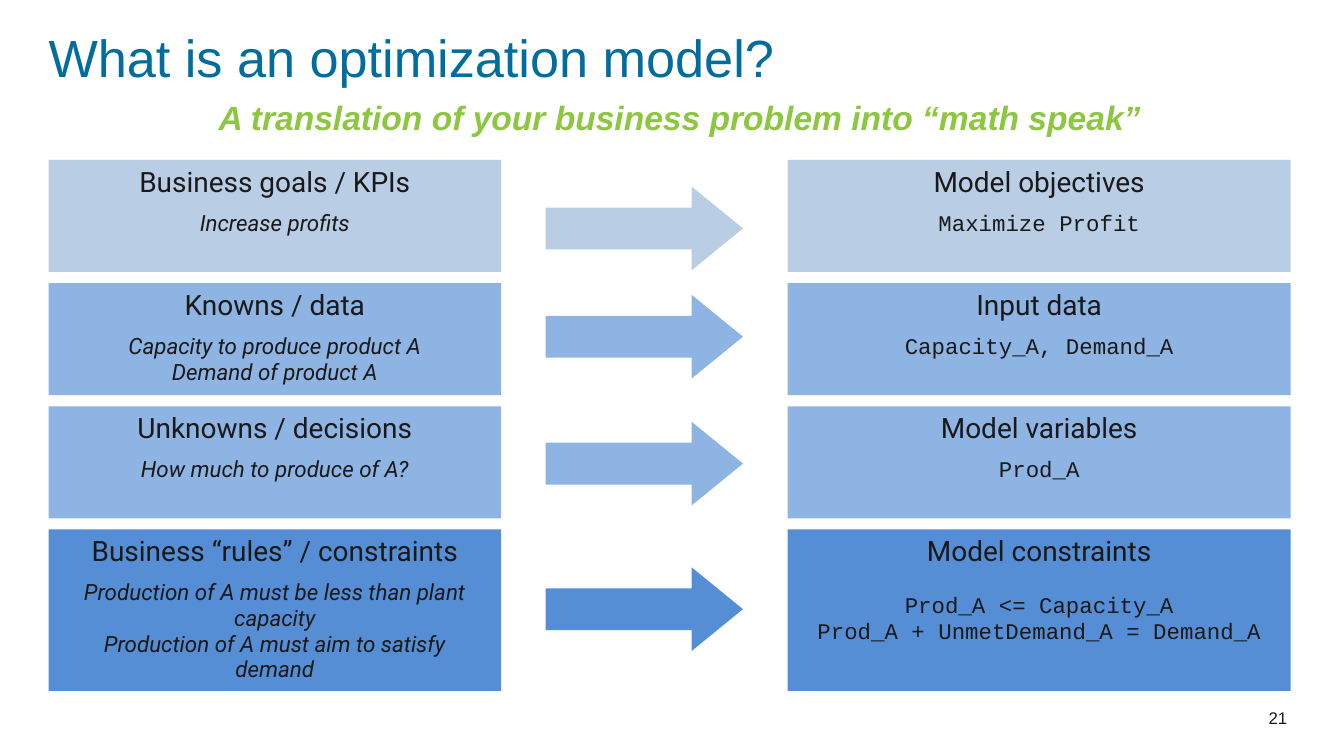
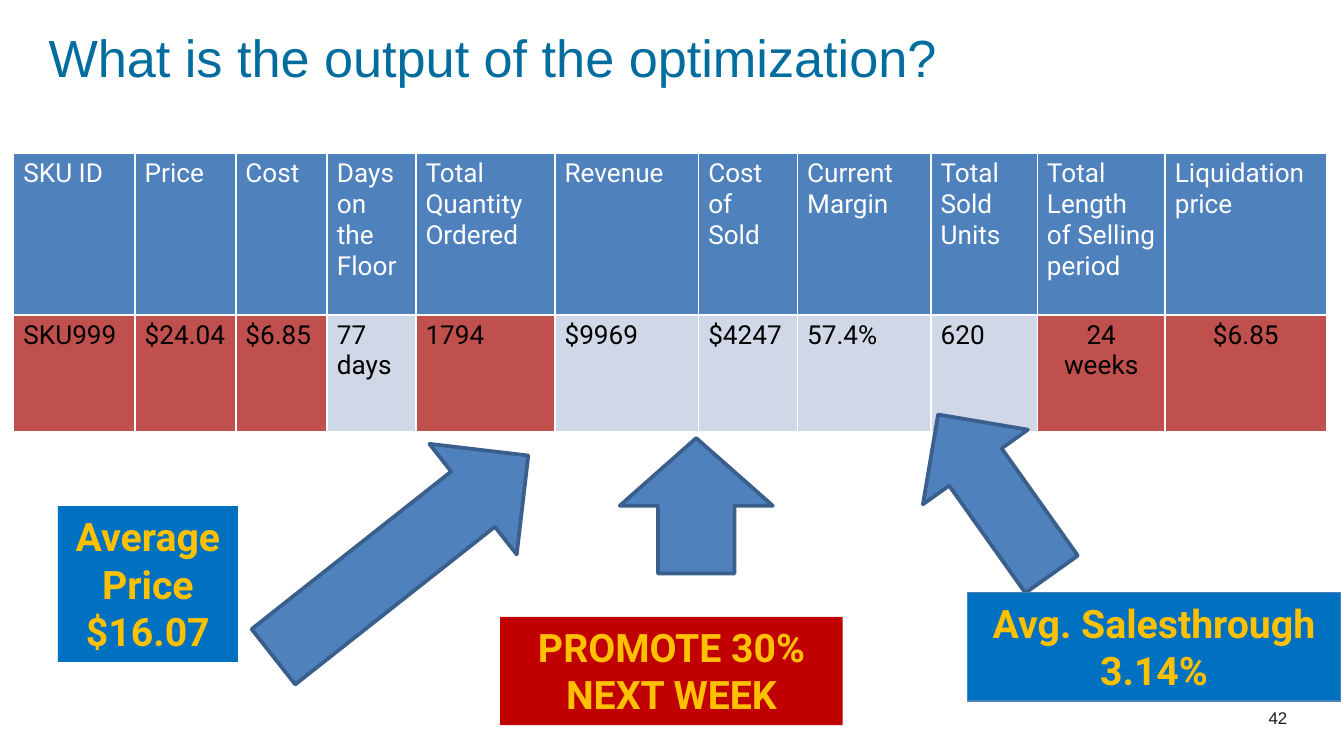
from lxml.etree import SubElement
from pptx import Presentation
from pptx.dml.color import RGBColor
from pptx.enum.shapes import MSO_SHAPE
from pptx.enum.text import MSO_ANCHOR, MSO_AUTO_SIZE, PP_ALIGN
from pptx.oxml.ns import qn
from pptx.util import Pt

INK, TITLE_BLUE, GREEN, GOLD = "191919", "006D9E", "8DC740", "FFC000"
BLUE, DARK_BLUE, LABEL_BLUE = "4F81BD", "3A5F8C", "0070C0"
RED, DARK_RED, PALE, WHITE, BLACK = "C0504D", "C00000", "D0D8E8", "FFFFFF", "000000"


def add_run(p, text, size, color, font="Roboto", bold=False, italic=False):
    r = p.add_run()
    r.text = text
    r.font.size, r.font.name = Pt(size), font
    r.font.bold, r.font.italic = bold, italic
    r.font.color.rgb = RGBColor.from_string(color)


def add_block(s, kind, box, fill, line=None, line_width=2):
    """Add a flat preset shape; box is left, top, width, height in points."""
    sp = s.shapes.add_shape(kind, *map(Pt, box))
    sp.shadow.inherit = False
    sp.fill.solid()
    sp.fill.fore_color.rgb = RGBColor.from_string(fill)
    if line:
        sp.line.color.rgb = RGBColor.from_string(line)
        sp.line.width = Pt(line_width)
    else:
        sp.line.fill.background()
    sp.text_frame.vertical_anchor = MSO_ANCHOR.TOP
    return sp


prs = Presentation()
prs.slide_width, prs.slide_height = Pt(720), Pt(405)

# Title and page number on every slide
slides = []
for title, number in [("What is an optimization model?", "21"),
                      ("What is the output of the optimization?", "42")]:
    s = prs.slides.add_slide(prs.slide_layouts[5])
    slides.append(s)
    sp = s.shapes.title
    sp.left, sp.top, sp.width, sp.height = Pt(26), Pt(17), Pt(666), Pt(31)
    tf = sp.text_frame
    tf.margin_left = tf.margin_top = tf.margin_right = tf.margin_bottom = 0
    tf.auto_size = MSO_AUTO_SIZE.NONE
    tf.vertical_anchor = MSO_ANCHOR.MIDDLE
    p = tf.paragraphs[0]
    p.alignment, p.line_spacing = PP_ALIGN.LEFT, 0.9
    add_run(p, title, 28, TITLE_BLUE, "Arial")

    p = s.shapes.add_textbox(Pt(672.5), Pt(377), Pt(32), Pt(28)).text_frame.paragraphs[0]
    p.line_spacing = 0.9
    add_run(p, number, 9, INK, "Arial")

model_slide, output_slide = slides

# Slide 1: business terms on the left become model terms on the right
tf = model_slide.shapes.add_textbox(Pt(110), Pt(48.5), Pt(513), Pt(29)).text_frame
tf.word_wrap = False
add_run(tf.paragraphs[0], "A translation of your business problem into “math speak”",
        18, GREEN, "Arial", bold=True, italic=True)

# fill, height, arrow top, business heading and lines, model heading and lines, model gap
translations = [
    ("B9CDE5", 60, 100, "Business goals / KPIs", ["Increase profits"],
     "Model objectives", ["Maximize Profit"], 6.7),
    ("8EB4E3", 60, 158, "Knowns / data",
     ["Capacity to produce product A", "Demand of product A"],
     "Input data", ["Capacity_A, Demand_A"], 6.7),
    ("8EB4E3", 60, 226, "Unknowns / decisions", ["How much to produce of A?"],
     "Model variables", ["Prod_A"], 6.7),
    ("558ED5", 86.5, 304, "Business “rules” / constraints",
     ["Production of A must be less than plant capacity",
      "Production of A must aim to satisfy demand"],
     "Model constraints",
     ["Prod_A <= Capacity_A", "Prod_A + UnmetDemand_A = Demand_A"], 13.4),
]
for row, (fill, height, arrow_top, business, needs, model, code, gap) in enumerate(translations):
    top = 85.7 + 66 * row
    for left, width, heading, lines, font, space in [
            (26, 242.5, business, needs, "Roboto", 6.7),
            (422, 269.5, model, code, "Courier New", gap)]:
        tf = add_block(model_slide, MSO_SHAPE.RECTANGLE, (left, top, width, height), fill).text_frame
        add_run(tf.paragraphs[0], heading, 15, INK)
        for i, text in enumerate(lines):
            p = tf.add_paragraph()
            p.space_before = Pt(0 if i else space)
            add_run(p, text, 12, INK, font, italic=font == "Roboto")
        for p in tf.paragraphs:
            p.alignment, p.line_spacing = PP_ALIGN.CENTER, 0.95
    arrow = add_block(model_slide, MSO_SHAPE.RIGHT_ARROW, (292.3, arrow_top, 105.7, 44.8), fill)
    arrow.adjustments[1] = 0.613

# Slide 2: result table; column width, header, value, value fill, value alignment
columns = [
    (65, "SKU ID", "SKU999", RED, PP_ALIGN.LEFT),
    (54, "Price", "$24.04", RED, PP_ALIGN.LEFT),
    (49, "Cost", "$6.85", RED, PP_ALIGN.LEFT),
    (47.5, "Days on the Floor", "77\ndays", PALE, PP_ALIGN.LEFT),
    (74.5, "Total Quantity Ordered", "1794", RED, PP_ALIGN.LEFT),
    (77, "Revenue", "$9969", PALE, PP_ALIGN.LEFT),
    (53, "Cost of Sold", "$4247", PALE, PP_ALIGN.LEFT),
    (71.5, "Current Margin", "57.4%", PALE, PP_ALIGN.LEFT),
    (57, "Total Sold Units", "620", PALE, PP_ALIGN.LEFT),
    (68.5, "Total Length of Selling period", "24 weeks", RED, PP_ALIGN.CENTER),
    (86.5, "Liquidation price", "$6.85", RED, PP_ALIGN.CENTER),
]
table = output_slide.shapes.add_table(2, len(columns), Pt(7.3), Pt(82.2), Pt(703.5), Pt(149)).table
table.rows[0].height, table.rows[1].height = Pt(86.5), Pt(62.5)
for col, (width, header, value, value_fill, align) in enumerate(columns):
    table.columns[col].width = Pt(width)
    for row, (text, fill, color, alignment) in enumerate([
            (header, BLUE, WHITE, PP_ALIGN.LEFT), (value, value_fill, BLACK, align)]):
        cell = table.cell(row, col)
        cell.margin_left = cell.margin_right = Pt(5.2)
        cell.margin_top = cell.margin_bottom = Pt(2.6)
        tcPr = cell._tc.get_or_add_tcPr()
        for side in ("a:lnL", "a:lnR", "a:lnT", "a:lnB"):
            border = SubElement(tcPr, qn(side), w=str(Pt(1)))
            SubElement(SubElement(border, qn("a:solidFill")), qn("a:srgbClr"), val=WHITE)
        cell.fill.solid()
        cell.fill.fore_color.rgb = RGBColor.from_string(fill)
        for i, part in enumerate(text.split("\n")):
            tf = cell.text_frame
            p = tf.add_paragraph() if i else tf.paragraphs[0]
            p.alignment = alignment
            add_run(p, part, 14, color)

# Arrows from the labels up to the table
for box, rotation in [((332, 234.7, 82, 72.5), 0),
                      ((177, 211, 75.5, 174), 51.7),
                      ((498.5, 212.4, 69, 105), 324.6)]:
    add_block(output_slide, MSO_SHAPE.UP_ARROW, box, BLUE, DARK_BLUE).rotation = rotation

for box, fill, line, lines in [
        ((268, 330.5, 183.5, 58), DARK_RED, None, ["PROMOTE 30% NEXT WEEK"]),
        ((31, 271.2, 96.5, 83.5), LABEL_BLUE, None, ["Average Price", "$16.07"]),
        ((518.3, 317.5, 200, 58), LABEL_BLUE, BLUE, ["Avg. Salesthrough", "3.14%"])]:
    tf = add_block(output_slide, MSO_SHAPE.RECTANGLE, box, fill, line, 0.75).text_frame
    for i, text in enumerate(lines):
        p = tf.add_paragraph() if i else tf.paragraphs[0]
        p.alignment = PP_ALIGN.CENTER
        add_run(p, text, 21, GOLD, bold=True)

prs.save("out.pptx")
